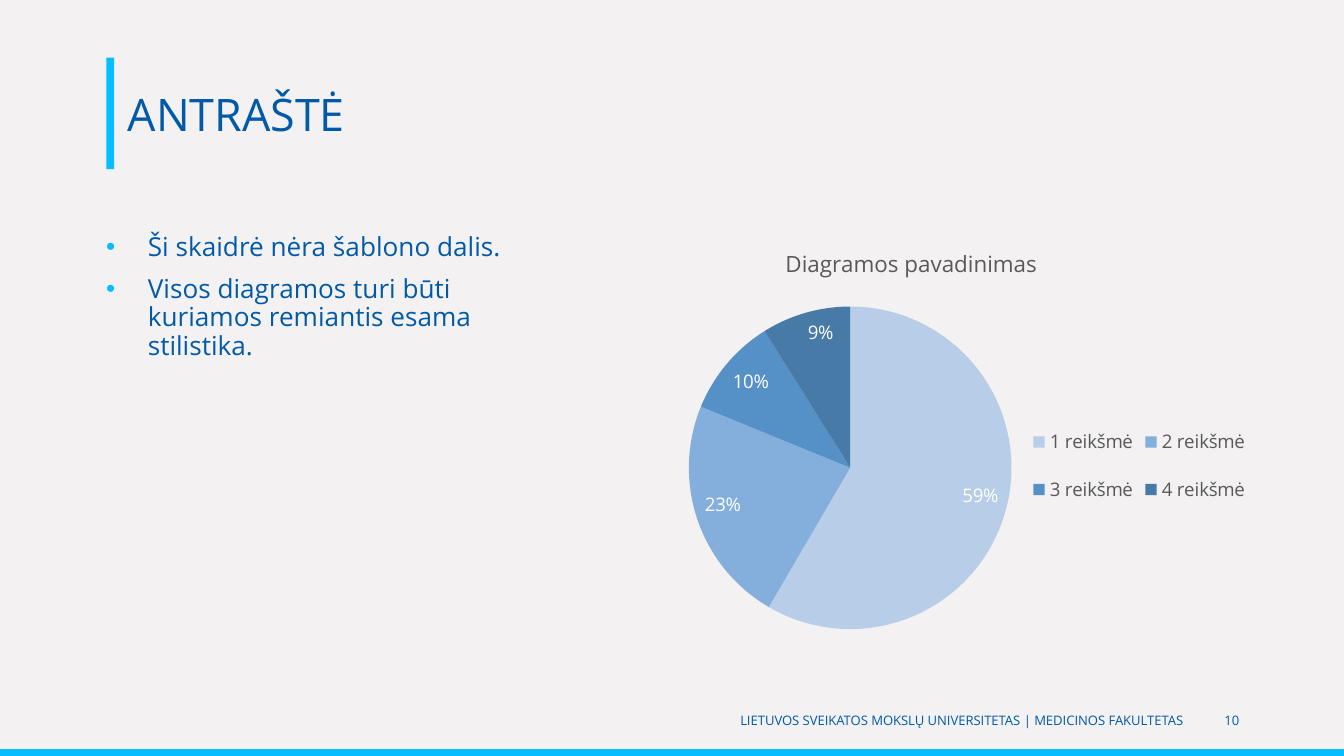
from lxml.etree import SubElement
from pptx import Presentation
from pptx.chart.data import CategoryChartData
from pptx.dml.color import RGBColor
from pptx.enum.chart import XL_CHART_TYPE, XL_LABEL_POSITION, XL_LEGEND_POSITION
from pptx.enum.shapes import MSO_SHAPE
from pptx.enum.text import MSO_ANCHOR, MSO_AUTO_SIZE, PP_ALIGN
from pptx.oxml import parse_xml
from pptx.oxml.ns import nsdecls, qn
from pptx.util import Cm, Pt

FONT = "Open Sans"
NAVY, CYAN, GREY = "015AA7", "06BDFF", "595959"


def colour(value):
    return RGBColor.from_string(value)


def style_font(font, size, value):
    font.name = FONT
    font.size = Pt(size)
    font.bold = False
    font.color.rgb = colour(value)


def place(shape, box):
    shape.left, shape.top, shape.width, shape.height = (Cm(length) for length in box)


def add_span(para, text, size, value):
    span = para.add_run()
    span.text = text
    style_font(span.font, size, value)


def add_bar(page, box):
    bar = page.shapes.add_shape(MSO_SHAPE.RECTANGLE, *(Cm(length) for length in box))
    bar.shadow.inherit = False
    bar.fill.solid()
    bar.fill.fore_color.rgb = colour(CYAN)
    bar.line.fill.background()


def add_heading(page, box, text):
    left, top, width, height = box
    bar_width = 0.15
    add_bar(page, (left, top, bar_width, height))
    title = page.shapes.title
    place(title, (left + bar_width, top, width - bar_width, height))
    frame = title.text_frame
    frame.auto_size = MSO_AUTO_SIZE.NONE
    frame.vertical_anchor = MSO_ANCHOR.MIDDLE
    para = frame.paragraphs[0]
    para.alignment = PP_ALIGN.LEFT
    add_span(para, text, 24, NAVY)


def add_bullets(page, box, lines):
    body = page.placeholders[1]
    place(body, box)
    frame = body.text_frame
    frame.auto_size = MSO_AUTO_SIZE.NONE
    for number, line in enumerate(lines):
        para = frame.add_paragraph() if number else frame.paragraphs[0]
        para.line_spacing = 0.9
        para.space_before = Pt(7.5 if number else 0)
        properties = para._p.get_or_add_pPr()
        properties.set("marL", str(Cm(0.79)))
        properties.set("indent", str(Cm(-0.79)))
        bullet_colour = SubElement(properties, qn("a:buClr"))
        SubElement(bullet_colour, qn("a:srgbClr")).set("val", CYAN)
        SubElement(properties, qn("a:buFont")).set("typeface", "Arial")
        SubElement(properties, qn("a:buChar")).set("char", "•")
        add_span(para, line, 14, NAVY)


def chart_layout(x, y, width, height, inner=False):
    target = '<c:layoutTarget val="inner"/>' if inner else ""
    return parse_xml(
        f'<c:layout {nsdecls("c")}><c:manualLayout>{target}'
        '<c:xMode val="edge"/><c:yMode val="edge"/>'
        f'<c:x val="{x}"/><c:y val="{y}"/><c:w val="{width}"/><c:h val="{height}"/>'
        "</c:manualLayout></c:layout>"
    )


def add_pie(page, box, name, slices):
    data = CategoryChartData(number_format="General")
    data.categories = [label for label, _, _ in slices]
    data.add_series(name, [value for _, value, _ in slices])
    frame = page.shapes.add_chart(XL_CHART_TYPE.PIE, *(Cm(length) for length in box), data)
    chart = frame.chart
    style_font(chart.font, 10, "000000")

    chart.has_title = True
    add_span(chart.chart_title.text_frame.paragraphs[0], name, 12, GREY)
    chart.chart_title.include_in_layout = False

    chart.has_legend = True
    legend = chart.legend
    legend.position = XL_LEGEND_POSITION.RIGHT
    legend.include_in_layout = False
    style_font(legend.font, 10, GREY)
    legend._element.find(qn("c:legendPos")).addnext(chart_layout(0.67, 0.43, 0.33, 0.28))

    area = chart._chartSpace.chart.plotArea
    for layout in area.findall(qn("c:layout")):
        area.remove(layout)
    area.insert(0, chart_layout(0.17, 0.19, 0.48, 0.77, inner=True))

    series = chart.plots[0].series[0]
    for number, (_, _, shade) in enumerate(slices):
        point = series.points[number].format
        point.fill.solid()
        point.fill.fore_color.rgb = colour(shade)
        point.line.fill.background()
    labels = series.data_labels
    labels.show_value = True
    labels.number_format = '0"%"'
    labels.number_format_is_linked = False
    labels.position = XL_LABEL_POSITION.INSIDE_END
    style_font(labels.font, 10, "FFFFFF")


def add_footer(page, box, text, number):
    left, top, width, height = box
    number_width, gap = 0.91, 0.15
    columns = (
        (left, width - number_width - gap, text),
        (left + width - number_width, number_width, number),
    )
    for column_left, column_width, content in columns:
        column = (column_left, top, column_width, height)
        frame = page.shapes.add_textbox(*(Cm(length) for length in column)).text_frame
        frame.word_wrap = True
        frame.vertical_anchor = MSO_ANCHOR.MIDDLE
        para = frame.paragraphs[0]
        para.alignment = PP_ALIGN.RIGHT
        add_span(para, content, 7, "015AA8")


def main():
    deck = Presentation()
    deck.slide_width, deck.slide_height = Cm(25.4), Cm(14.29)
    page = deck.slides.add_slide(deck.slide_layouts[1])
    page.background.fill.solid()
    page.background.fill.fore_color.rgb = colour("F3F1F2")

    add_bar(page, (0, 14.16, 25.4, 0.13))
    add_heading(page, (2.01, 1.09, 21.64, 2.11), "ANTRAŠTĖ")
    add_bullets(page, (1.75, 4.29, 8.2, 7.92), (
        "Ši skaidrė nėra šablono dalis.",
        "Visos diagramos turi būti kuriamos remiantis esama stilistika.",
    ))
    add_pie(page, (10.8, 4.29, 12.85, 7.92), "Diagramos pavadinimas", (
        ("1 reikšmė", 59, "B8CDE8"),
        ("2 reikšmė", 23, "84AEDC"),
        ("3 reikšmė", 10, "5591C7"),
        ("4 reikšmė", 9, "487AA8"),
    ))
    add_footer(
        page, (4.27, 13.23, 19.4, 0.76),
        "LIETUVOS SVEIKATOS MOKSLŲ UNIVERSITETAS | MEDICINOS FAKULTETAS", "10",
    )
    deck.save("out.pptx")


if __name__ == "__main__":
    main()
